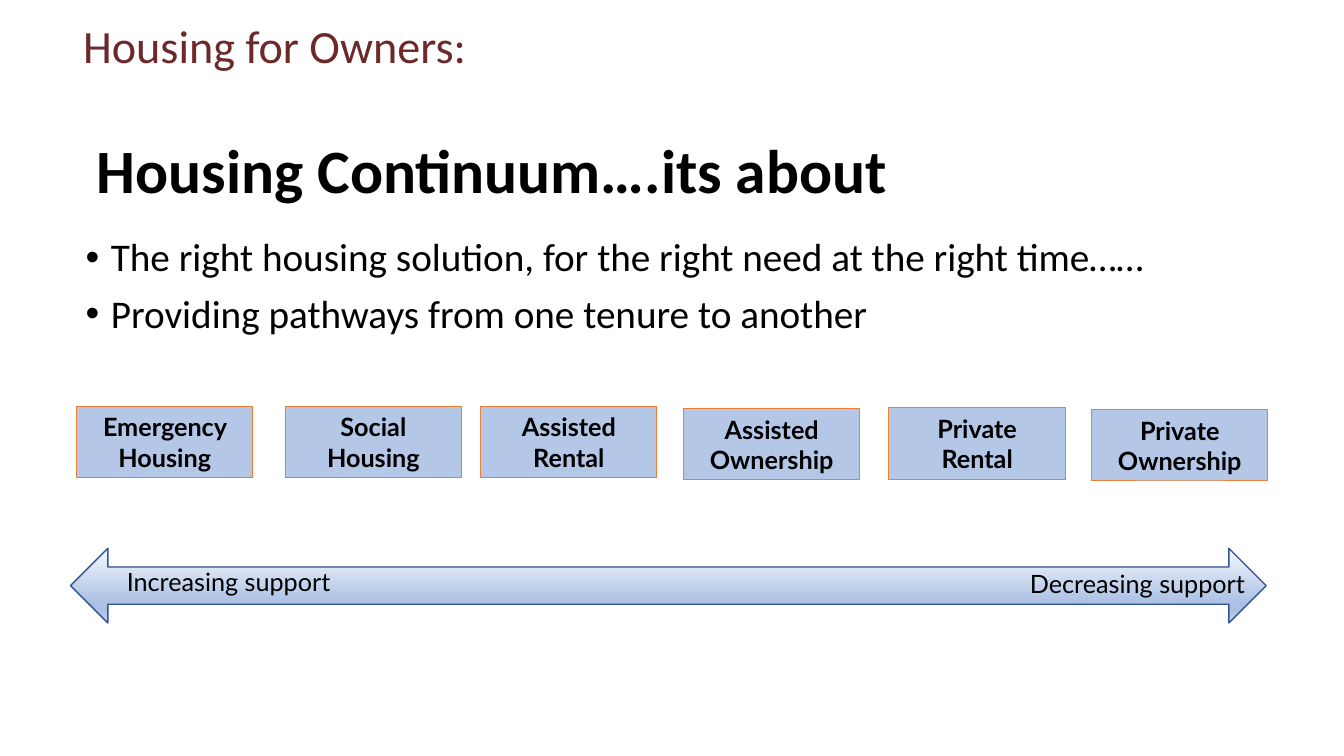
import lxml.etree
import pptx
import pptx.dml.color
import pptx.enum.shapes
import pptx.enum.text
import pptx.oxml.ns
import pptx.util

Pt = pptx.util.Pt
RGBColor = pptx.dml.color.RGBColor
Shape = pptx.enum.shapes.MSO_SHAPE
Align = pptx.enum.text.PP_ALIGN
Anchor = pptx.enum.text.MSO_ANCHOR
Fit = pptx.enum.text.MSO_AUTO_SIZE
qn = pptx.oxml.ns.qn

BLACK = RGBColor(0x00, 0x00, 0x00)
MAROON = RGBColor(0x6D, 0x29, 0x29)
TENURE_FILL = RGBColor(0xB4, 0xC7, 0xE7)
TENURE_LINE = RGBColor(0xED, 0x7D, 0x31)
ARROW_LINE = RGBColor(0x32, 0x54, 0x91)
ARROW_PALE = RGBColor(0xF6, 0xF8, 0xFC)
ARROW_DEEP = RGBColor(0xAB, 0xC0, 0xE4)
ARROW_SOFT = RGBColor(0xC7, 0xD5, 0xED)
ARROW_STOPS = [(0, ARROW_PALE), (74, ARROW_DEEP), (83, ARROW_DEEP), (100, ARROW_SOFT)]

TENURES = [
    ("Emergency Housing", 0, 0),
    ("Social Housing", 149, 0),
    ("Assisted Rental", 288.6, 0),
    ("Assisted Ownership", 433.5, 1.5),
    ("Private\vRental", 580.3, 1.2),
    ("Private Ownership", 725, 2.4),
]


def place(shape, left, top, width, height):
    """Move a shape to a box given in points."""
    shape.left, shape.top = Pt(left), Pt(top)
    shape.width, shape.height = Pt(width), Pt(height)


def style_text(frame, font, size, color=BLACK, bold=False, align=Align.LEFT,
               spacing=1.0, anchor=Anchor.TOP, fit=Fit.NONE):
    """Format every paragraph and run of a text frame."""
    frame.word_wrap = True
    frame.auto_size = fit
    frame.vertical_anchor = anchor
    for para in frame.paragraphs:
        para.alignment = align
        para.line_spacing = spacing
        for span in para.runs:
            span.font.name = font
            span.font.size = Pt(size)
            span.font.bold = bold
            span.font.color.rgb = color


def add_header(page, left, top, width, height):
    """Add the section name above the title."""
    box = page.shapes.add_textbox(Pt(left), Pt(top), Pt(width), Pt(height))
    box.text_frame.text = "Housing for Owners:"
    box.text_frame.margin_left = Pt(15.4)
    style_text(box.text_frame, "Calibri", 33, MAROON, spacing=0.7, anchor=Anchor.MIDDLE)


def fill_title(page, left, top, width, height):
    """Write the slide title in its placeholder."""
    title = page.shapes.title
    place(title, left, top, width, height)
    title.text_frame.text = "Housing Continuum….its about"
    style_text(title.text_frame, "Calibri", 44, bold=True, spacing=0.9, anchor=Anchor.MIDDLE)


def fill_body(page, left, top, width, height):
    """Write the two bulleted aims in the body placeholder."""
    body = page.placeholders[1]
    place(body, left, top, width, height)
    frame = body.text_frame
    frame.text = ("The right housing solution, for the right need at the right time……\n"
                  "Providing pathways from one tenure to another")
    for number, para in enumerate(frame.paragraphs):
        properties = para._p.get_or_add_pPr()
        properties.set("marL", str(Pt(18)))
        properties.set("indent", str(Pt(-18)))
        lxml.etree.SubElement(properties, qn("a:buChar")).set("char", "•")
        para.space_before = Pt(10 if number else 0)
    style_text(frame, "Calibri", 28, spacing=0.9)


def add_tenures(page, left, top, width, height):
    """Add the row of tenure boxes, offset from the row's corner."""
    for label, across, down in TENURES:
        box = page.shapes.add_shape(Shape.RECTANGLE, Pt(left + across), Pt(top + down),
                                    Pt(width), Pt(height))
        box.shadow.inherit = False
        box.fill.solid()
        box.fill.fore_color.rgb = TENURE_FILL
        box.line.color.rgb = TENURE_LINE
        box.line.width = Pt(0.75)
        box.text_frame.text = label
        style_text(box.text_frame, "Lato", 18, bold=True, align=Align.CENTER,
                   anchor=Anchor.MIDDLE, fit=Fit.SHAPE_TO_FIT_TEXT)


def add_support_arrow(page, left, top, width, height):
    """Add the shaded double arrow with a label at each end."""
    arrow = page.shapes.add_shape(Shape.LEFT_RIGHT_ARROW, Pt(left), Pt(top),
                                  Pt(width), Pt(height))
    arrow.shadow.inherit = False
    arrow.line.color.rgb = ARROW_LINE
    arrow.line.width = Pt(1)
    arrow.fill.gradient()
    arrow.fill.gradient_angle = 270
    stops = arrow._element.spPr.find(".//" + qn("a:gsLst"))
    for stop in list(stops):
        stops.remove(stop)
    for percent, color in ARROW_STOPS:
        stop = lxml.etree.SubElement(stops, qn("a:gs"), pos=str(percent * 1000))
        lxml.etree.SubElement(stop, qn("a:srgbClr"), val=str(color))
    for label, across, down, span_width in [("Increasing support", 33.1, 9.4, 238),
                                            ("Decreasing support", 678.2, 10.8, 228)]:
        box = page.shapes.add_textbox(Pt(left + across), Pt(top + down),
                                      Pt(span_width), Pt(29))
        box.text_frame.text = label
        style_text(box.text_frame, "Lato", 18, fit=Fit.SHAPE_TO_FIT_TEXT)


def main():
    """Build the housing continuum slide."""
    deck = pptx.Presentation()
    deck.slide_width, deck.slide_height = Pt(960), Pt(540)
    page = deck.slides.add_slide(deck.slide_layouts[1])
    fill_title(page, 62, 72, 850, 104.4)
    fill_body(page, 54, 166.3, 892, 165.6)
    add_tenures(page, 54.7, 290.2, 126, 51)
    add_support_arrow(page, 50.4, 391.7, 854, 53.3)
    add_header(page, 44, 15.8, 828, 41.8)
    deck.save("out.pptx")


if __name__ == "__main__":
    main()
